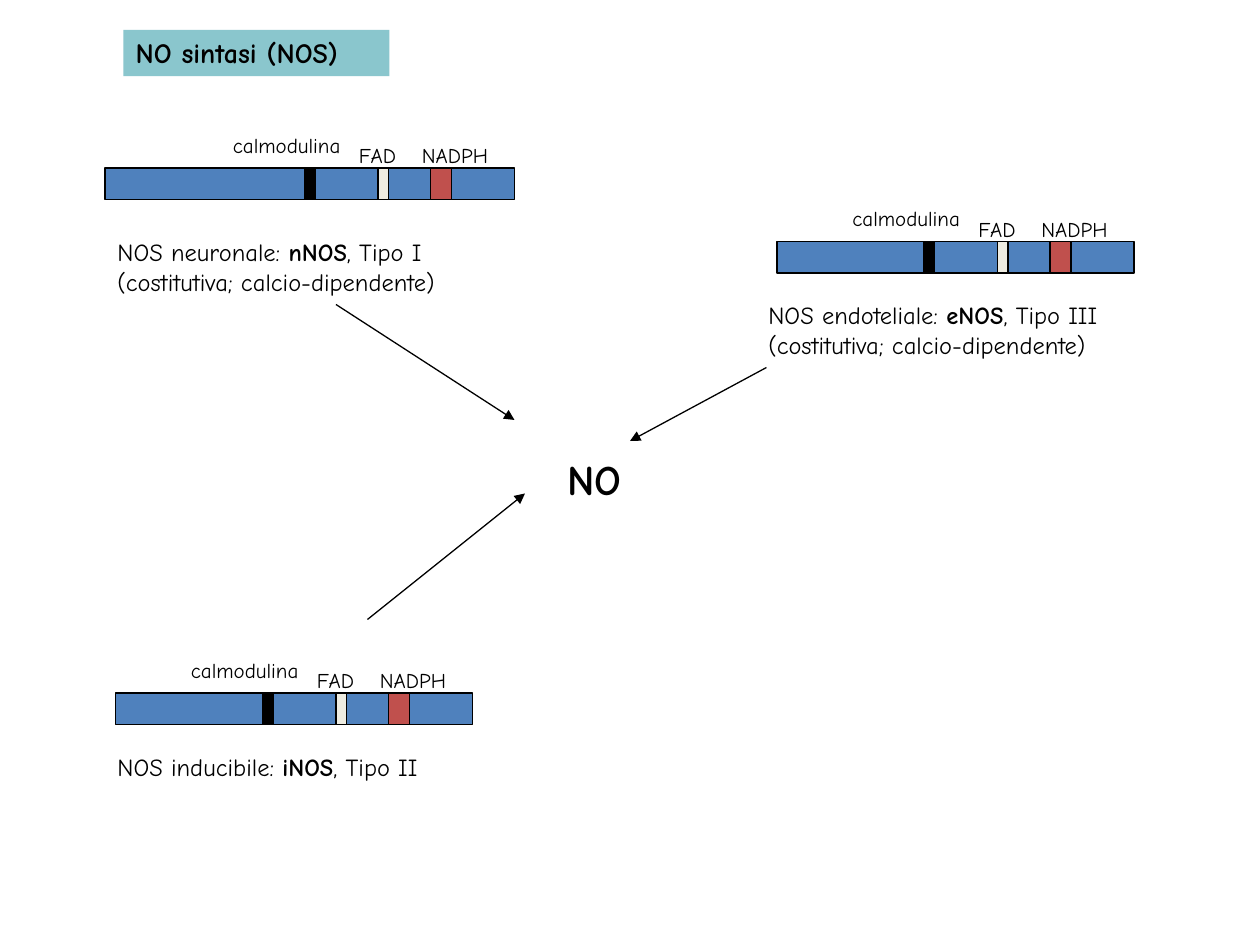
import dataclasses
import typing

import pptx
import pptx.dml.color
import pptx.enum.shapes
import pptx.enum.text
import pptx.oxml
import pptx.oxml.ns
import pptx.util

Pt = pptx.util.Pt

COLORS = {
    "black": "000000",
    "enzyme": "4F81BD",
    "FAD": "EEECE1",
    "NADPH": "C0504D",
    "title": "8AC6CD",
}
FONT = "Comic Neue"
LINE_WIDTH = 0.75
BAR_HEIGHT = 18
TAIL_LENGTH = 120  # from the calmodulin site to the end of every enzyme

Run = tuple[str, bool]  # text, bold


@dataclasses.dataclass
class Domain:
    name: str
    color: str
    offset: float  # from the calmodulin site
    width: float
    label_offset: float
    label_rise: float
    label_width: float


@dataclasses.dataclass
class Enzyme:
    left: float
    top: float
    calmodulin: float
    caption_left: float
    caption_top: float
    caption_width: float
    caption: list[list[Run]]


@dataclasses.dataclass
class Arrow:
    start: tuple[float, float]
    end: tuple[float, float]


DOMAINS = [
    Domain("calmodulina", "black", 0, 6, -48, 24, 78),
    Domain("FAD", "FAD", 42, 6, 24, 18, 39),
    Domain("NADPH", "NADPH", 72, 12, 60, 18, 57),
]

CONSTITUTIVE = [("(costitutiva; calcio-dipendente)", False)]
ENZYMES = [
    Enzyme(60, 96, 174, 60, 132, 218, [
        [("NOS neuronale: ", False), ("nNOS", True), (", Tipo I", False)],
        CONSTITUTIVE,
    ]),
    Enzyme(444, 138, 528, 432, 168, 233, [
        [("NOS endoteliale: ", False), ("eNOS", True), (", Tipo III", False)],
        CONSTITUTIVE,
    ]),
    Enzyme(66, 396, 150, 60, 426, 212, [
        [("NOS inducibile: ", False), ("iNOS", True), (", Tipo II", False)],
    ]),
]

ARROWS = [
    Arrow((192, 174), (294, 240)),
    Arrow((210, 354), (300, 282)),
    Arrow((438, 210), (360, 252)),
]


def rgb(name: str) -> pptx.dml.color.RGBColor:
    return pptx.dml.color.RGBColor.from_string(COLORS[name])


def set_values(target: typing.Any, values: dict[str, typing.Any]) -> None:
    for name, value in values.items():
        setattr(target, name, value)


def add_bar(shapes, left: float, top: float, width: float, color: str) -> None:
    bar = shapes.add_shape(pptx.enum.shapes.MSO_SHAPE.RECTANGLE,
                           Pt(left), Pt(top), Pt(width), Pt(BAR_HEIGHT))
    bar.shadow.inherit = False
    bar.fill.solid()
    bar.fill.fore_color.rgb = rgb(color)
    bar.line.color.rgb = rgb("black")
    bar.line.width = Pt(LINE_WIDTH)


def add_text(shapes, left: float, top: float, width: float, height: float,
             lines: list[list[Run]], size: float, fill: str | None = None) -> None:
    box = shapes.add_textbox(Pt(left), Pt(top), Pt(width), Pt(height))
    if fill:
        box.fill.solid()
        box.fill.fore_color.rgb = rgb(fill)
    set_values(box.text_frame, {
        "word_wrap": False,
        "auto_size": pptx.enum.text.MSO_AUTO_SIZE.SHAPE_TO_FIT_TEXT,
    })
    for index, line in enumerate(lines):
        para = box.text_frame.add_paragraph() if index else box.text_frame.paragraphs[0]
        for text, bold in line:
            span = para.add_run()
            span.text = text
            set_values(span.font, {"name": FONT, "size": Pt(size), "bold": bold})
            span.font.color.rgb = rgb("black")


def add_enzyme(shapes, enzyme: Enzyme) -> None:
    group = shapes.add_group_shape().shapes
    length = enzyme.calmodulin + TAIL_LENGTH - enzyme.left
    add_bar(group, enzyme.left, enzyme.top, length, "enzyme")
    for domain in DOMAINS:
        add_bar(group, enzyme.calmodulin + domain.offset, enzyme.top,
                domain.width, domain.color)
    for domain in DOMAINS:
        add_text(group, enzyme.calmodulin + domain.label_offset,
                 enzyme.top - domain.label_rise, domain.label_width, 21.6,
                 [[(domain.name, False)]], 12)


def add_caption(shapes, enzyme: Enzyme) -> None:
    height = 7 + 17 * len(enzyme.caption)
    add_text(shapes, enzyme.caption_left, enzyme.caption_top,
             enzyme.caption_width, height, enzyme.caption, 14)


def add_arrow(shapes, arrow: Arrow) -> None:
    connector = shapes.add_connector(pptx.enum.shapes.MSO_CONNECTOR.STRAIGHT,
                                     *map(Pt, arrow.start + arrow.end))
    connector.line.color.rgb = rgb("black")
    connector.line.width = Pt(LINE_WIDTH)
    properties = connector.line._get_or_add_ln()
    namespace = pptx.oxml.ns.nsdecls("a")
    properties.append(pptx.oxml.parse_xml(f'<a:tailEnd {namespace} type="triangle"/>'))
    connector._element.spPr.append(pptx.oxml.parse_xml(f"<a:effectLst {namespace}/>"))


def main() -> None:
    deck = pptx.Presentation()
    set_values(deck, {"slide_width": Pt(720), "slide_height": Pt(540)})
    page = deck.slides.add_slide(deck.slide_layouts[6])

    # Enzyme diagrams and their captions
    for enzyme in ENZYMES:
        add_enzyme(page.shapes, enzyme)
    for enzyme in ENZYMES:
        add_caption(page.shapes, enzyme)

    # Arrows leading to the common product
    for arrow in ARROWS:
        add_arrow(page.shapes, arrow)
    add_text(page.shapes, 317, 255.5, 53, 36, [[("NO", True)]], 24)

    # Title
    add_text(page.shapes, 70.5, 17, 152, 26.5,
             [[("NO sintasi (NOS)", True)]], 16, "title")

    deck.save("out.pptx")


if __name__ == "__main__":
    main()
